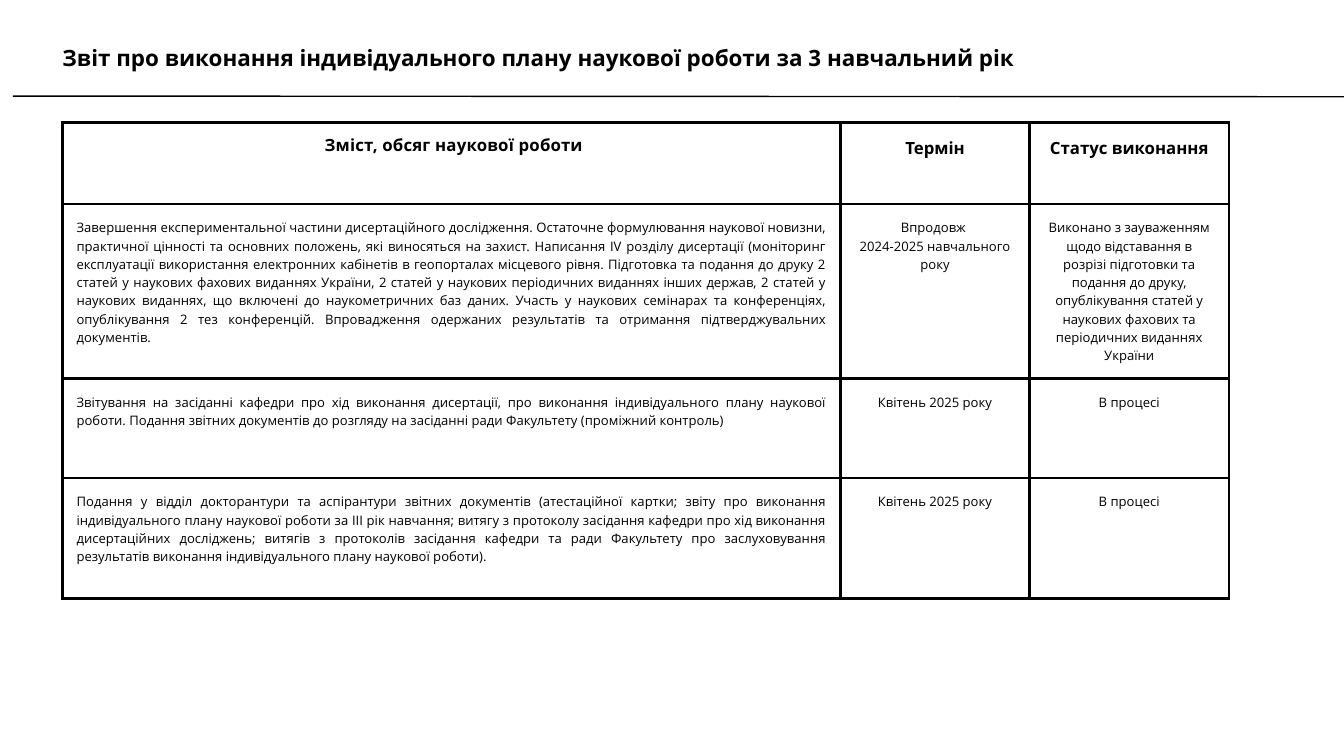
from dataclasses import dataclass

from lxml import etree
from pptx import Presentation
from pptx import util as u
from pptx.dml.color import RGBColor
from pptx.enum import shapes, text
from pptx.oxml import ns

COLORS = {"ink": "000000", "paper": "FFFFFF"}
FONT = "Open Sans"
WIDTH, HEIGHT = u.Inches(20), u.Inches(11.25)
LEFT, TABLE_TOP = 4.65, 16.18
COLUMNS = (57.9, 14.05, 14.85)
ROWS = (10.84, 23.02, 13.16, 15.91)
CELL_MARGIN = u.Inches(0.21)
CENTER, JUSTIFY = text.PP_ALIGN.CENTER, text.PP_ALIGN.JUSTIFY


@dataclass(frozen=True)
class Style:
    size: float
    leading: float
    bold: bool = False
    align: text.PP_ALIGN = text.PP_ALIGN.LEFT
    spacing: int = 0


@dataclass(frozen=True)
class Task:
    content: str
    term: str
    status: str


TITLE = Style(24, 21.6, bold=True)
HEADER = (
    Style(18, 22, True, CENTER, 20),
    Style(18, 25.2, True, CENTER),
    Style(18, 25.2, True, CENTER),
)
BODY = (Style(14, 19.6, align=JUSTIFY), Style(14, 19.6, align=CENTER), Style(14, 19.6, align=CENTER))

TASKS = (
    Task(" Зміст, обсяг наукової роботи", "Термін", "Статус виконання"),
    Task(
        "Завершення експериментальної частини дисертаційного дослідження. "
        "Остаточне формулювання наукової новизни, практичної цінності та основних положень, "
        "які виносяться на захист. Написання ІV розділу дисертації (моніторинг експлуатації "
        "використання електронних кабінетів в геопорталах місцевого рівня. Підготовка та подання "
        "до друку 2 статей у наукових фахових виданнях України, 2 статей у наукових періодичних "
        "виданнях інших держав, 2 статей у наукових виданнях, що включені до наукометричних баз "
        "даних. Участь у наукових семінарах та конференціях, опублікування 2 тез конференцій. "
        "Впровадження одержаних результатів та отримання підтверджувальних документів. ",
        "Впродовж \n2024-2025 навчального року",
        "Виконано з зауваженням щодо відставання в розрізі підготовки та подання до друку, "
        "опублікування статей у наукових фахових та періодичних виданнях України",
    ),
    Task(
        "Звітування на засіданні кафедри про хід виконання дисертації, про виконання "
        "індивідуального плану наукової роботи. Подання звітних документів до розгляду "
        "на засіданні ради Факультету (проміжний контроль)",
        "Квітень 2025 року",
        "В процесі",
    ),
    Task(
        "Подання у відділ докторантури та аспірантури звітних документів (атестаційної картки; "
        "звіту про виконання індивідуального плану наукової роботи за ІІІ рік навчання; витягу "
        "з протоколу засідання кафедри про хід виконання дисертаційних досліджень; витягів "
        "з протоколів засідання кафедри та ради Факультету про заслуховування результатів "
        "виконання індивідуального плану наукової роботи).",
        "Квітень 2025 року",
        "В процесі",
    ),
)


def x(percent: float) -> int:
    return round(WIDTH * percent / 100)


def y(percent: float) -> int:
    return round(HEIGHT * percent / 100)


def write(tf, words: str, style: Style) -> None:
    tf.word_wrap = True
    tf.text = words
    for p in tf.paragraphs:
        p.alignment = style.align
        p.line_spacing = u.Pt(style.leading)
        for r in p.runs:
            r.font.name = FONT
            r.font.size = u.Pt(style.size)
            r.font.bold = style.bold
            r.font.color.rgb = RGBColor.from_string(COLORS["ink"])
            if style.spacing:
                r.font._element.set("spc", str(style.spacing))


def add_borders(cell, points: float) -> None:
    tc_pr = cell._tc.get_or_add_tcPr()
    for side in ("L", "R", "T", "B"):
        ln = etree.SubElement(tc_pr, ns.qn(f"a:ln{side}"), w=str(u.Pt(points)))
        fill = etree.SubElement(ln, ns.qn("a:solidFill"))
        etree.SubElement(fill, ns.qn("a:srgbClr"), val=COLORS["ink"])


def add_rule(s) -> None:
    line = s.shapes.add_connector(
        shapes.MSO_CONNECTOR.STRAIGHT, x(100.95), y(12.8), x(0.95), y(12.71)
    )
    line.line.color.rgb = RGBColor.from_string(COLORS["ink"])
    line.line.width = u.Pt(1.5)
    etree.SubElement(line._element.spPr, ns.qn("a:effectLst"))


def add_plan(s) -> None:
    frame = s.shapes.add_table(
        len(ROWS), len(COLUMNS), x(LEFT), y(TABLE_TOP), x(sum(COLUMNS)), y(sum(ROWS))
    )
    table = frame.table
    table.first_row = table.horz_banding = False
    for column, share in zip(table.columns, COLUMNS):
        column.width = x(share)
    for i, (row, share, task) in enumerate(zip(table.rows, ROWS, TASKS)):
        row.height = y(share)
        words = (task.content, task.term, task.status)
        for cell, content, style in zip(row.cells, words, BODY if i else HEADER):
            cell.margin_left = cell.margin_right = CELL_MARGIN
            cell.margin_top = cell.margin_bottom = CELL_MARGIN
            cell.vertical_anchor = text.MSO_ANCHOR.TOP
            add_borders(cell, 3)
            cell.fill.background()
            write(cell.text_frame, content, style)


def add_title(s, words: str) -> None:
    sp = s.shapes.add_textbox(x(LEFT), y(6.67), x(71.9), y(2.84))
    tf = sp.text_frame
    tf.margin_left = tf.margin_right = tf.margin_top = tf.margin_bottom = 0
    write(tf, words, TITLE)
    tf.auto_size = text.MSO_AUTO_SIZE.SHAPE_TO_FIT_TEXT


def main() -> None:
    prs = Presentation()
    prs.slide_width, prs.slide_height = WIDTH, HEIGHT
    s = prs.slides.add_slide(prs.slide_layouts[6])
    s.background.fill.solid()
    s.background.fill.fore_color.rgb = RGBColor.from_string(COLORS["paper"])
    add_rule(s)
    add_plan(s)
    add_title(s, "Звіт про виконання індивідуального плану наукової роботи за 3 навчальний рік")
    prs.save("out.pptx")


if __name__ == "__main__":
    main()
